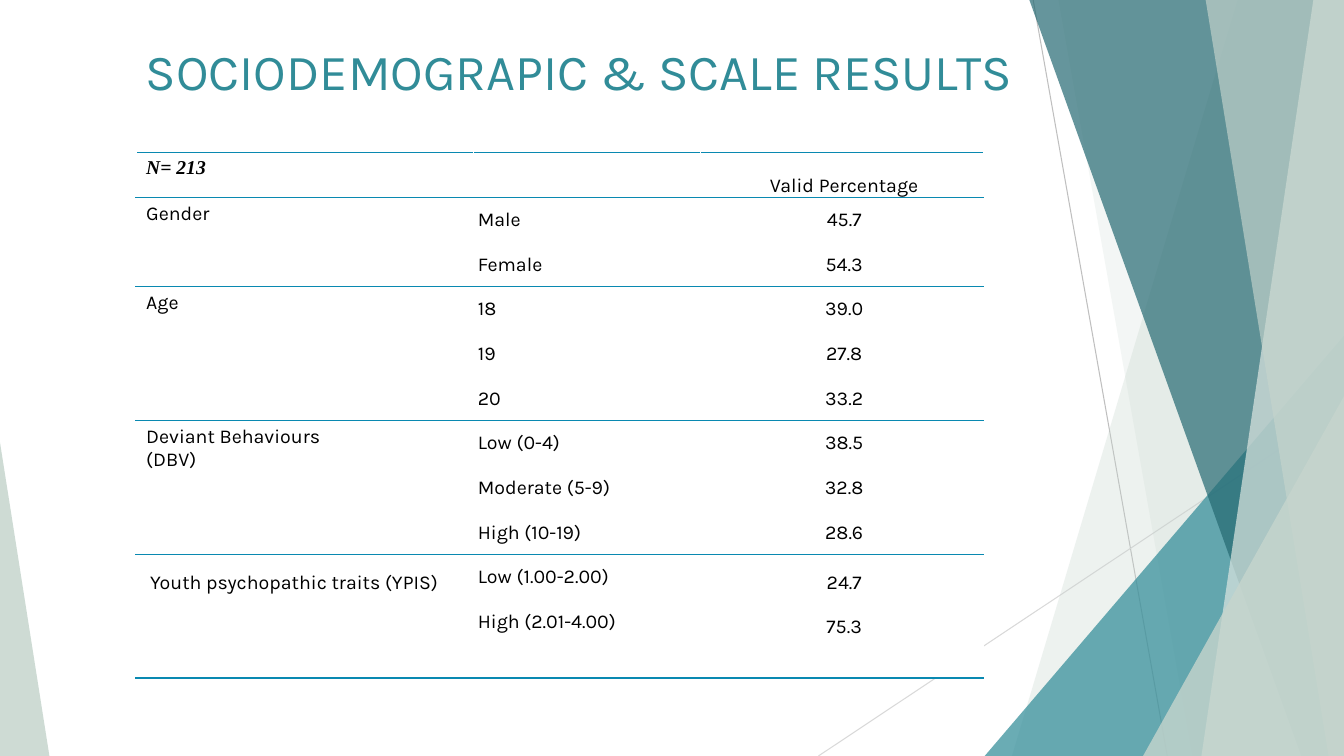
"""Build the sociodemographic and scale results slide."""
from lxml import etree
from pptx import Presentation, util as u
from pptx.dml.color import RGBColor
from pptx.enum import shapes, text
from pptx.oxml.ns import qn

Pt = u.Pt
W, H = 960, 540
TEAL, SAGE, RULE, WHITE, BLACK = "318C98", "C6D5CD", "0989B1", "FFFFFF", "000000"

TITLE = "SOCIODEMOGRAPIC & SCALE RESULTS"
HEADER = ("N= 213", "", "Valid Percentage")
GROUPS = [
    (["Gender"], [(["Male"], ["45.7"]), (["Female"], ["54.3"])]),
    (["Age"], [(["18"], ["39.0"]), (["19"], ["27.8"]), (["20"], ["33.2"])]),
    (["Deviant Behaviours", "(DBV)"],
     [(["Low (0-4)"], ["38.5"]),
      (["Moderate (5-9)", "High (10-19)"], ["32.8", "28.6"])]),
    (["Youth psychopathic traits (YPIS)"],
     [(["Low (1.00-2.00)"], ["24.7"]), (["High (2.01-4.00)"], ["75.3"]), ([], [])]),
]
TABLE_LEFT, TABLE_TOP = 97.2, 108.9
COLUMNS = [241.2, 162, 202.3]
ROW, DOUBLE_ROW, LAST_ROW = 31.9, 64, 24.4

LINES = [((738, 0), (833.8, H), "BFBFBF"), ((W, 290.2), (584.6, H), "D9D9D9")]
FACETS = [
    ("band", (884.2, 722.9), SAGE, 30),
    ("band", (756, 851.8), SAGE, 20),
    ("triangle", (703.4, 239.8, 256.6, 1), TEAL, 72),
    ("band", (735.1, 929.5), "256972", 70),
    ("band", (938.2, 858.2), "DDE6E1", 70),
    ("band", (861.1, 949), SAGE, 65),
    ("triangle", (816.5, 283, 143.5, 1), SAGE, 80),
    ("triangle", (0, 316.1, 35.3, 0), SAGE, 85),
]


def color(hex_code):
    return RGBColor.from_string(hex_code)


def add_line(s, start, end, hex_code):
    c = s.shapes.add_connector(shapes.MSO_CONNECTOR.STRAIGHT, *map(Pt, start + end))
    c.line.color.rgb = color(hex_code)
    c.line.width = Pt(0.75)
    etree.SubElement(c._element.spPr, qn("a:effectLst"))


def add_facet(s, kind, place, hex_code, opacity):
    if kind == "band":
        top_x, bottom_x = place
        points = [(top_x, -0.5), (W, -0.5), (W, H), (bottom_x, H)]
        points = [(Pt(x), Pt(y)) for x, y in points]
        builder = s.shapes.build_freeform(*points[0], scale=1.0)
        builder.add_line_segments(points[1:], close=True)
        sp = builder.convert_to_shape()
    else:
        left, top, width, apex = place
        sp = s.shapes.add_shape(shapes.MSO_SHAPE.ISOSCELES_TRIANGLE,
                                Pt(left), Pt(top), Pt(width), Pt(H - top))
        sp.adjustments[0] = apex
    sp.shadow.inherit = False
    sp.line.fill.background()
    sp.fill.solid()
    sp.fill.fore_color.rgb = color(hex_code)
    tint = sp._element.spPr.find(qn("a:solidFill"))[0]
    etree.SubElement(tint, qn("a:alpha"), val=str(opacity * 1000))


def style(p, size, hex_code, name="Karla"):
    p.font.size, p.font.name = Pt(size), name
    p.font.color.rgb = color(hex_code)


def write(cell, lines, centered=False, spaced=True):
    tf = cell.text_frame
    for i, line in enumerate(lines or [""]):
        p = tf.add_paragraph() if i else tf.paragraphs[0]
        if line:
            p.add_run().text = line
        style(p, 14, BLACK)
        if centered:
            p.alignment = text.PP_ALIGN.CENTER
        if spaced:
            p.line_spacing, p.space_after = 1.5, Pt(8)


def tighten(cell):
    cell.margin_left = Pt(2.9)
    cell.margin_right = cell.margin_top = cell.margin_bottom = 0


def finish(cell, top, bottom):
    tcPr = cell._tc.get_or_add_tcPr()
    for side, hex_code in zip("LRTB", (WHITE, WHITE, top, bottom)):
        ln = etree.SubElement(tcPr, qn("a:ln" + side), w=str(Pt(1)))
        fill = etree.SubElement(ln, qn("a:solidFill"))
        etree.SubElement(fill, qn("a:srgbClr"), val=hex_code)
    cell.fill.solid()
    cell.fill.fore_color.rgb = color(WHITE)


def add_results(s):
    heights = [ROW] + [DOUBLE_ROW if len(labels) > 1 else ROW if labels else LAST_ROW
                       for _, rows in GROUPS for labels, _ in rows]
    table = s.shapes.add_table(len(heights), len(COLUMNS), Pt(TABLE_LEFT), Pt(TABLE_TOP),
                               Pt(sum(COLUMNS)), Pt(sum(heights))).table
    table.first_row = table.horz_banding = False
    for column, width in zip(table.columns, COLUMNS):
        column.width = Pt(width)
    for row, height in zip(table.rows, heights):
        row.height = Pt(height)

    for c, label in enumerate(HEADER):
        cell = table.cell(0, c)
        write(cell, [label], centered=c == 2, spaced=False)
        finish(cell, RULE, RULE)
    f = table.cell(0, 0).text_frame.paragraphs[0].font
    f.name, f.bold, f.italic = "Times New Roman", True, True
    percentage = table.cell(0, 2)
    tighten(percentage)
    percentage.vertical_anchor = text.MSO_ANCHOR.BOTTOM
    p = percentage.text_frame.paragraphs[0]
    p.line_spacing, p.space_after = Pt(16), Pt(8)

    first = 1
    for names, rows in GROUPS:
        last = first + len(rows) - 1
        is_scale = rows is GROUPS[-1][1]
        group = table.cell(first, 0)
        group.merge(table.cell(last, 0))
        write(group, names, spaced=is_scale)
        if is_scale:
            group.margin_left = Pt(10.1)
        for r, (labels, values) in enumerate(rows, first):
            finish(table.cell(r, 0), RULE, RULE)
            for c, lines in ((1, labels), (2, values)):
                cell = table.cell(r, c)
                write(cell, lines, centered=c == 2, spaced=bool(lines))
                tighten(cell)
                finish(cell, RULE if r == first else WHITE, RULE if r == last else WHITE)
            if is_scale:
                table.cell(r, 2).vertical_anchor = text.MSO_ANCHOR.MIDDLE
        first = last + 1


def add_title(s):
    tf = s.shapes.add_textbox(Pt(97.2), Pt(22.3), Pt(676.8), Pt(64)).text_frame
    tf.word_wrap = True
    tf.margin_top = Pt(6)
    p = tf.paragraphs[0]
    p.add_run().text = TITLE
    style(p, 36, TEAL)


def main():
    prs = Presentation()
    prs.slide_width, prs.slide_height = Pt(W), Pt(H)
    s = prs.slides.add_slide(prs.slide_layouts[6])
    for line in LINES:
        add_line(s, *line)
    for facet in FACETS:
        add_facet(s, *facet)
    add_title(s)
    add_results(s)
    prs.save("out.pptx")


if __name__ == "__main__":
    main()
